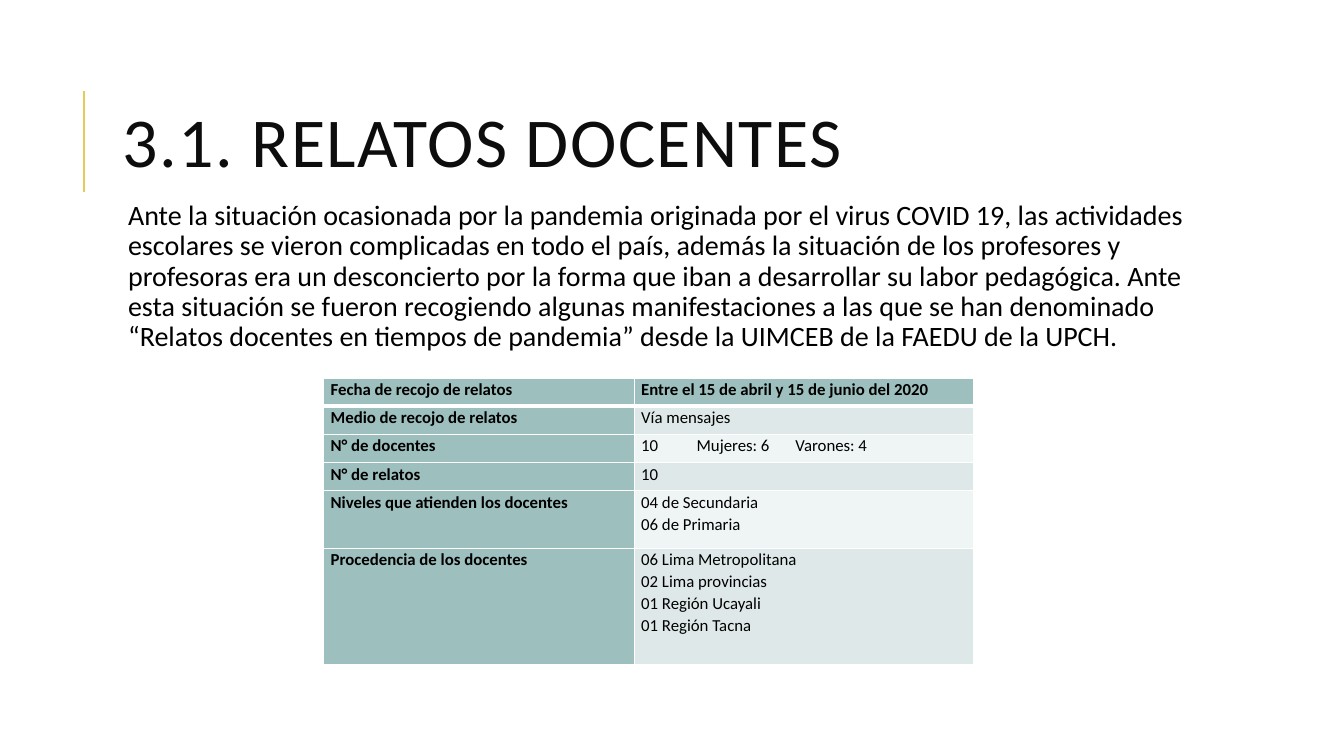
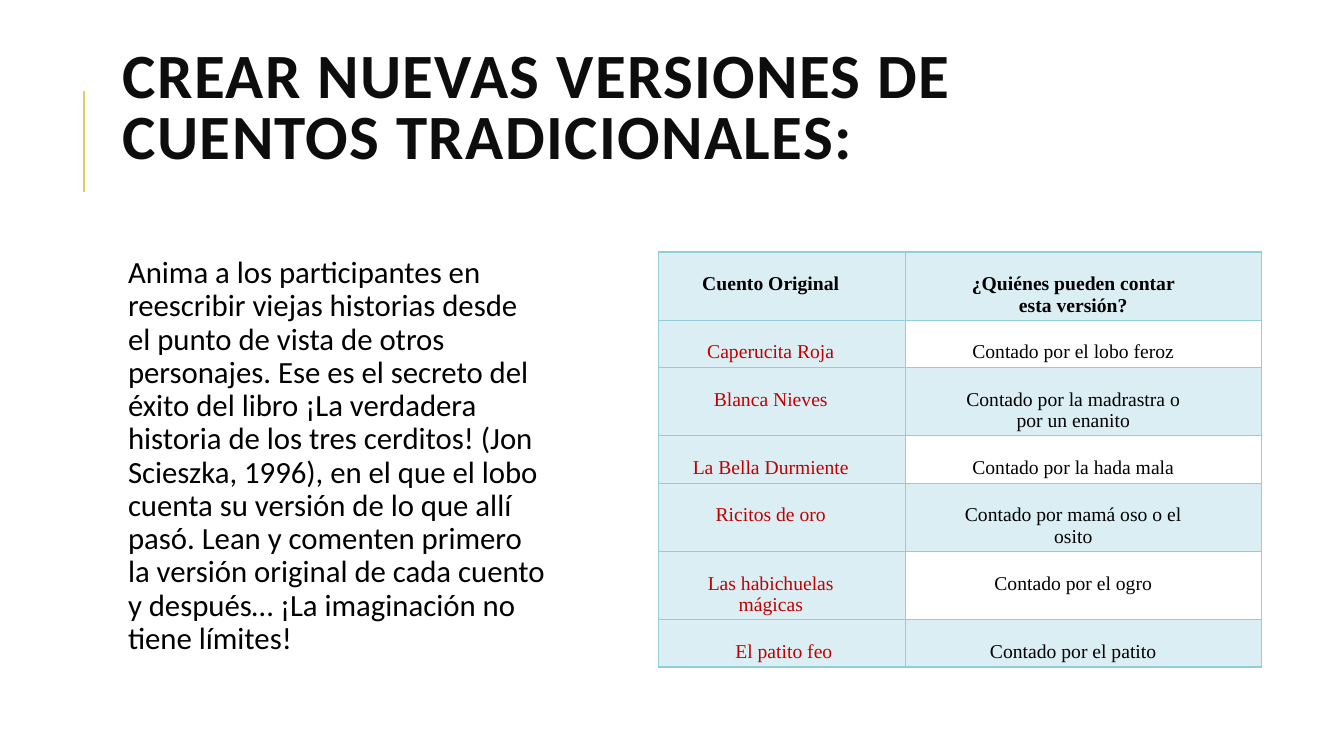
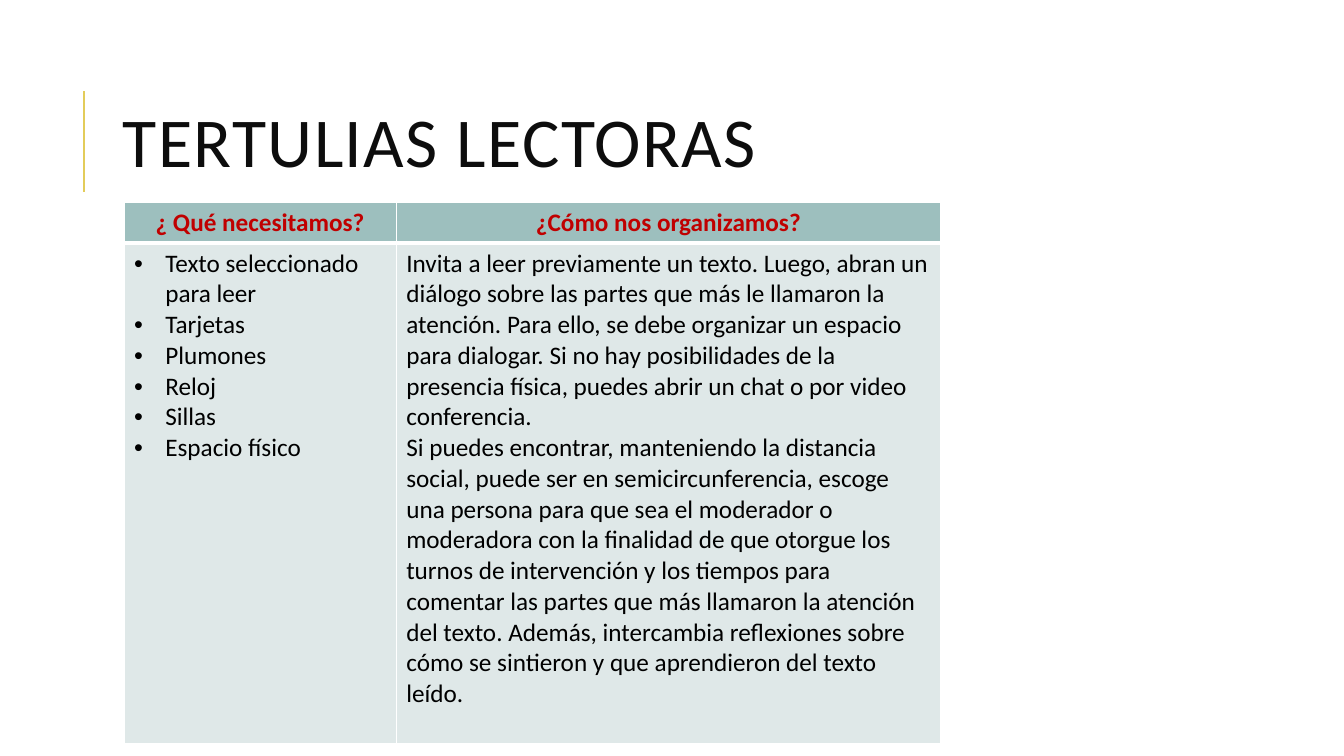
from lxml.etree import SubElement
from pptx import Presentation
from pptx.dml.color import RGBColor
from pptx.enum.shapes import MSO_CONNECTOR
from pptx.enum.text import MSO_ANCHOR, PP_ALIGN
from pptx.oxml.ns import qn
from pptx.util import Inches, Pt

# Colours and fonts
WHITE = RGBColor(0xFF, 0xFF, 0xFF)
BLACK = RGBColor(0x00, 0x00, 0x00)
TITLE_INK = RGBColor(0x0D, 0x0D, 0x0D)
GOLD = RGBColor(0xE3, 0xCC, 0x5A)
RED = RGBColor(0xC0, 0x00, 0x00)
TEAL = RGBColor(0x9D, 0xBF, 0xBE)
TEAL_PALE = RGBColor(0xDF, 0xE8, 0xE8)
TEAL_FAINT = RGBColor(0xEF, 0xF4, 0xF4)
SKY = RGBColor(0xDA, 0xEE, 0xF3)
SKY_LINE = RGBColor(0x92, 0xCD, 0xDC)
SANS = "Calibri"
SERIF = "Times New Roman"

# Cell margins in inches: left, top, right, bottom
TIGHT = (0.07, 0, 0.07, 0)
ROOMY = (0.1, 0.05, 0.1, 0.05)

STORY_FACTS = [
    ("Fecha de recojo de relatos", ["Entre el 15 de abril y 15 de junio del 2020"], 0.28),
    ("Medio de recojo de relatos", ["Vía mensajes"], 0.28),
    ("N° de docentes", ["10\tMujeres: 6\tVarones: 4"], 0.28),
    ("N° de relatos", ["10"], 0.28),
    ("Niveles que atienden los docentes", ["04 de Secundaria", "06 de Primaria"], 0.57),
    ("Procedencia de los docentes",
     ["06 Lima Metropolitana", "02 Lima provincias", "01 Región Ucayali",
      "01 Región Tacna"], 1.15),
]
TALES = [
    ("Cuento Original", "¿Quiénes pueden contar esta versión?", 0.65),
    ("Caperucita Roja", "Contado por el lobo feroz", 0.47),
    ("Blanca Nieves", "Contado por la madrastra o por un enanito", 0.65),
    ("La Bella Durmiente", "Contado por la hada mala", 0.47),
    ("Ricitos de oro", "Contado por mamá oso o el osito", 0.65),
    ("Las habichuelas mágicas", "Contado por el ogro", 0.65),
    ("El patito feo", "Contado por el patito", 0.47),
]
SUPPLIES = ["Texto seleccionado para leer", "Tarjetas", "Plumones", "Reloj",
            "Sillas", "Espacio físico"]
STEPS = [
    "Invita a leer previamente un texto. Luego, abran un diálogo sobre las partes que "
    "más le llamaron la atención. Para ello, se debe organizar un espacio para dialogar. "
    "Si no hay posibilidades de la presencia física, puedes abrir un chat o por video "
    "conferencia.",
    "Si puedes encontrar, manteniendo la distancia social, puede ser en "
    "semicircunferencia, escoge una persona para que sea el moderador o moderadora con la "
    "finalidad de que otorgue los turnos de intervención y los tiempos para comentar las "
    "partes que más llamaron la atención del texto. Además, intercambia reflexiones sobre "
    "cómo se sintieron y que aprendieron del texto leído.",
]


def set_margins(target, margins):
    for side, size in zip(("left", "top", "right", "bottom"), margins):
        setattr(target, f"margin_{side}", Inches(size))


def write(frame, lines, color=BLACK, spacing=1.0, align=PP_ALIGN.LEFT,
          bullet=False, tabs=(), tracking=0, **font):
    """Fill a text frame, one paragraph per line; font values go to each run."""
    for number, line in enumerate(lines):
        paragraph = frame.add_paragraph() if number else frame.paragraphs[0]
        paragraph.alignment = align
        paragraph.line_spacing = spacing
        properties = paragraph._p.get_or_add_pPr()
        if bullet:
            properties.set("marL", str(Inches(0.31)))
            properties.set("indent", str(-Inches(0.31)))
            SubElement(properties, qn("a:buFont"), typeface="Arial")
            SubElement(properties, qn("a:buChar"), char="•")
        if tabs:
            stops = SubElement(properties, qn("a:tabLst"))
            for stop in tabs:
                SubElement(stops, qn("a:tab"), pos=str(Inches(stop)), algn="l")
        run = paragraph.add_run()
        run.text = line
        for key, value in font.items():
            setattr(run.font, key, value)
        run.font.color.rgb = color
        if tracking:
            run._r.get_or_add_rPr().set("spc", str(tracking))


def add_text(slide, box, lines, margins, anchor=MSO_ANCHOR.TOP, **style):
    frame = slide.shapes.add_textbox(*map(Inches, box)).text_frame
    frame.word_wrap = True
    frame.vertical_anchor = anchor
    set_margins(frame, margins)
    write(frame, lines, **style)


def add_titled_slide(deck, title, top=0.64, size=50, bold=False):
    """Blank slide with the gold rule and the title."""
    slide = deck.slides.add_slide(deck.slide_layouts[6])
    rule = slide.shapes.add_connector(
        MSO_CONNECTOR.STRAIGHT, *map(Inches, (0.83, 1.9, 0.83, 0.9)))
    rule.line.color.rgb = GOLD
    rule.line.width = Pt(1.5)
    SubElement(rule._element.spPr, qn("a:effectLst"))
    add_text(slide, (1.12, top, 10.63, 1.64), [title], ROOMY, MSO_ANCHOR.MIDDLE,
             color=TITLE_INK, spacing=0.8, tracking=100, name=SANS, size=Pt(size),
             bold=bold)
    return slide


def add_body(slide, top, width, text, size):
    add_text(slide, (1.12, top, width, 4.4), [text], (0.15, 0.05, 0.05, 0.05),
             spacing=0.9, name=SANS, size=Pt(size))


def add_grid(slide, left, top, widths, heights):
    """Plain table whose cells are styled one by one."""
    grid = slide.shapes.add_table(
        len(heights), len(widths), Inches(left), Inches(top),
        Inches(sum(widths)), Inches(sum(heights))).table
    grid.first_row = grid.horz_banding = False
    for column, width in zip(grid.columns, widths):
        column.width = Inches(width)
    for row, height in zip(grid.rows, heights):
        row.height = Inches(height)
    return grid


def fill_cell(cell, lines, fill, edge=WHITE, top_edge=1, bottom_edge=1,
              margins=TIGHT, **style):
    set_margins(cell, margins)
    properties = cell._tc.get_or_add_tcPr()
    for side, points in zip("LRTB", (1, 1, top_edge, bottom_edge)):
        border = SubElement(properties, qn(f"a:ln{side}"), w=str(Pt(points)))
        SubElement(SubElement(border, qn("a:solidFill")), qn("a:srgbClr"), val=str(edge))
    cell.fill.solid()
    cell.fill.fore_color.rgb = fill
    write(cell.text_frame, lines, **style)


def header_edges(row):
    """The line under the first row is thicker."""
    return {"top_edge": 3 if row == 1 else 1, "bottom_edge": 3 if row == 0 else 1}


def build_stories(deck):
    slide = add_titled_slide(deck, "3.1. RELATOS DOCENTES")
    add_body(slide, 1.95, 11.15,
             "Ante la situación ocasionada por la pandemia originada por el virus COVID 19, "
             "las actividades escolares se vieron complicadas en todo el país, además la "
             "situación de los profesores y profesoras era un desconcierto por la forma que "
             "iban a desarrollar su labor pedagógica. Ante esta situación se fueron "
             "recogiendo algunas manifestaciones a las que se han denominado “Relatos "
             "docentes en tiempos de pandemia” desde la UIMCEB de la FAEDU de la UPCH.", 20)
    grid = add_grid(slide, 3.21, 3.75, (3.08, 3.37), [fact[2] for fact in STORY_FACTS])
    style = {"spacing": 1.07, "name": SANS, "size": Pt(12)}
    for row, (label, values, _) in enumerate(STORY_FACTS):
        band = TEAL if row == 0 else (TEAL_FAINT, TEAL_PALE)[row % 2]
        fill_cell(grid.cell(row, 0), [label], TEAL, bold=True, **header_edges(row), **style)
        fill_cell(grid.cell(row, 1), values, band, bold=row == 0,
                  tabs=(0.55, 1.53) if "\t" in values[0] else (),
                  **header_edges(row), **style)


def build_tales(deck):
    slide = add_titled_slide(deck, "CREAR NUEVAS VERSIONES DE CUENTOS TRADICIONALES:",
                             top=0.28, size=45, bold=True)
    add_body(slide, 2.5, 4.34,
             "Anima a los participantes en reescribir viejas historias desde el punto de "
             "vista de otros personajes. Ese es el secreto del éxito del libro ¡La verdadera "
             "historia de los tres cerditos! (Jon Scieszka, 1996), en el que el lobo cuenta "
             "su versión de lo que allí pasó. Lean y comenten primero la versión original de "
             "cada cuento y después… ¡La imaginación no tiene límites!", 22)
    grid = add_grid(slide, 6.53, 2.5, (2.45, 3.53), [tale[2] for tale in TALES])
    last = len(TALES) - 1
    for row, (tale, teller, _) in enumerate(TALES):
        style = {"edge": SKY_LINE, "align": PP_ALIGN.CENTER, "name": SERIF,
                 "size": Pt(14), "bold": row == 0}
        tale_margins = (0.11, 0.21, 0.07, 0) if row == last else (0.28, 0.21, 0.5, 0)
        fill_cell(grid.cell(row, 0), [tale], SKY, margins=tale_margins,
                  color=RED if row else BLACK, **style)
        fill_cell(grid.cell(row, 1), [teller], WHITE if row % 2 else SKY,
                  margins=(0.54, 0.21, 0.74, 0), **style)


def build_reading_circle(deck):
    slide = add_titled_slide(deck, "TERTULIAS LECTORAS")
    grid = add_grid(slide, 1.23, 2.01, (2.7, 5.4), (0.4, 4.97))
    style = {"margins": ROOMY, "name": SANS, "size": Pt(18)}
    for column, heading in enumerate(("¿ Qué necesitamos?", "¿Cómo nos organizamos?")):
        fill_cell(grid.cell(0, column), [heading], TEAL, color=RED, bold=True,
                  align=PP_ALIGN.CENTER, **header_edges(0), **style)
    for column, lines in enumerate((SUPPLIES, STEPS)):
        fill_cell(grid.cell(1, column), lines, TEAL_PALE, bullet=lines is SUPPLIES,
                  **header_edges(1), **style)


def main():
    deck = Presentation()
    deck.slide_width = Inches(13.33)
    deck.slide_height = Inches(7.5)
    build_stories(deck)
    build_tales(deck)
    build_reading_circle(deck)
    deck.save("out.pptx")


if __name__ == "__main__":
    main()
